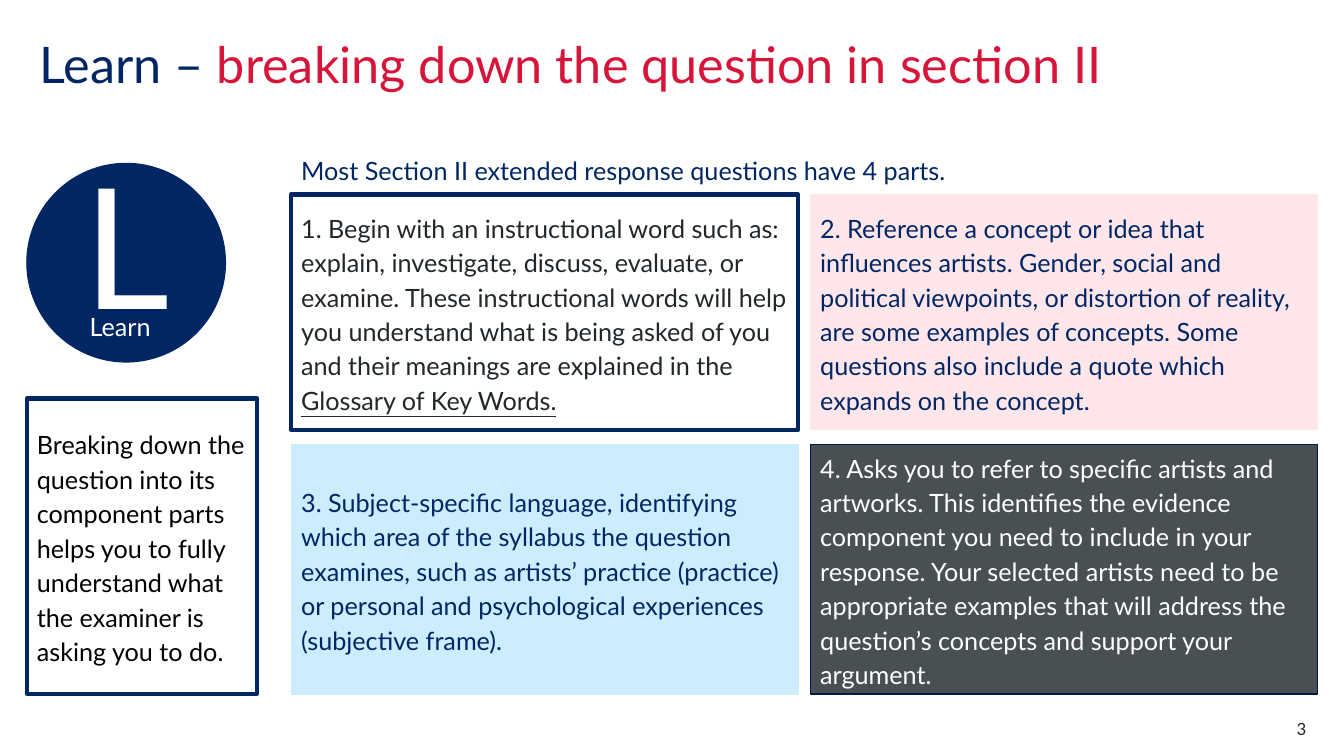
from dataclasses import dataclass

from pptx import Presentation
from pptx.dml.color import RGBColor
from pptx.enum.shapes import MSO_SHAPE
from pptx.enum.text import MSO_ANCHOR, MSO_AUTO_SIZE, PP_ALIGN
from pptx.util import Cm, Pt

RECT, OVAL = MSO_SHAPE.RECTANGLE, MSO_SHAPE.OVAL
TOP, MIDDLE = MSO_ANCHOR.TOP, MSO_ANCHOR.MIDDLE
LEFT, CENTER, RIGHT = PP_ALIGN.LEFT, PP_ALIGN.CENTER, PP_ALIGN.RIGHT
FIXED = MSO_AUTO_SIZE.NONE


@dataclass(frozen=True)
class Theme:
    font: str = "Lato"
    navy: str = "002664"
    deep: str = "001C4A"
    red: str = "D7153A"
    ink: str = "22272B"
    black: str = "000000"
    white: str = "FFFFFF"
    pink: str = "FFE6EA"
    sky: str = "CBEDFD"
    slate: str = "495054"
    head: int = 36
    body: int = 18
    small: int = 12
    giant: int = 120


class Page:
    def __init__(self, deck, theme):
        self.theme = theme
        self.slide = deck.slides.add_slide(deck.slide_layouts[5])

    def label(self, shape, parts, color, size, align=LEFT, lead=1.0, anchor=TOP):
        frame = shape.text_frame
        frame.word_wrap = True
        frame.auto_size = FIXED
        frame.vertical_anchor = anchor
        para = frame.paragraphs[0]
        para.alignment = align
        para.line_spacing = lead
        para.space_before = Pt(0)
        para.font.name = self.theme.font
        para.font.size = Pt(size)
        para.font.color.rgb = RGBColor.from_string(color)
        for part in parts:
            para.add_run().text = part
        return para.runs

    def inset(self, shape, side=0, top=0, bottom=0):
        frame = shape.text_frame
        frame.margin_left = frame.margin_right = Cm(side)
        frame.margin_top, frame.margin_bottom = Cm(top), Cm(bottom)

    def title(self, area, lead, rest):
        shape = self.slide.shapes.title
        shape.left, shape.top, shape.width, shape.height = map(Cm, area)
        self.inset(shape)
        runs = self.label(shape, [lead, rest], self.theme.navy, self.theme.head, lead=0.9)
        runs[1].font.color.rgb = RGBColor.from_string(self.theme.red)

    def text(self, area, words, color, size, align=LEFT, lead=1.0, bare=True):
        shape = self.slide.shapes.add_textbox(*map(Cm, area))
        if bare:
            self.inset(shape)
        self.label(shape, [words], color, size, align, lead)

    def shape(self, kind, area, fill, line, width):
        shape = self.slide.shapes.add_shape(kind, *map(Cm, area))
        shape.shadow.inherit = False
        shape.fill.solid()
        shape.fill.fore_color.rgb = RGBColor.from_string(fill)
        shape.line.color.rgb = RGBColor.from_string(line)
        shape.line.width = Pt(width)
        return shape

    def card(self, area, parts, fill, line, width, color):
        shape = self.shape(RECT, area, fill, line, width)
        return self.label(shape, parts, color, self.theme.body, lead=1.14, anchor=MIDDLE)

    def badge(self, area, letter):
        look = self.theme
        shape = self.shape(OVAL, area, look.navy, look.navy, 1)
        self.inset(shape, 0.25, 0.13, 1.15)
        self.label(shape, [letter], look.white, look.giant, CENTER, anchor=MIDDLE)


def main():
    deck = Presentation()
    deck.slide_width, deck.slide_height = Cm(33.87), Cm(19.05)
    look = Theme()
    page = Page(deck, look)

    page.title((1, 1, 28.96, 2.8), "Learn – ", "breaking down the question in section II")
    page.text((7.34, 3.68, 21.54, 1.07),
              "Most Section II extended response questions have 4 parts.",
              look.navy, look.body, lead=1.15, bare=False)
    page.badge((0.68, 4.12, 5, 5), "L")
    page.text((2.26, 7.85, 1.85, 1.22), "Learn", look.white, look.body)
    page.card((0.68, 10.04, 5.8, 7.44),
              ["Breaking down the question into its component parts helps you "
               "to fully understand what the examiner is asking you to do."],
              look.white, look.navy, 3, look.black)

    cards = [
        (["1. Begin with an instructional word such as: explain, investigate, "
          "discuss, evaluate, or examine. These instructional words will help "
          "you understand what is being asked of you and their meanings are "
          "explained in the ", "Glossary of Key Words."],
         look.white, look.navy, 3, look.ink),
        (["2. Reference a concept or idea that influences artists. Gender, "
          "social and political viewpoints, or distortion of reality, are some "
          "examples of concepts. Some questions also include a quote which "
          "expands on the concept."],
         look.pink, look.pink, 1, look.navy),
        (["3. Subject-specific language, identifying which area of the syllabus "
          "the question examines, such as artists’ practice (practice) or "
          "personal and psychological experiences (subjective frame)."],
         look.sky, look.sky, 1, look.navy),
        (["4. Asks you to refer to specific artists and artworks. This "
          "identifies the evidence component you need to include in your "
          "response. Your selected artists need to be appropriate examples that "
          "will address the question’s concepts and support your argument."],
         look.slate, look.deep, 1, look.white),
    ]
    rows = [(4.9, 5.93), (11.2, 6.29)]
    for i, card in enumerate(cards):
        top, height = rows[i // 2]
        runs = page.card((7.34 + i % 2 * 13.08, top, 12.78, height), *card)
        if len(runs) > 1:
            runs[-1].font.underline = True

    page.text((30.91, 18.11, 2.01, 0.51), "3", look.ink, look.small, RIGHT)
    deck.save("out.pptx")


if __name__ == "__main__":
    main()
